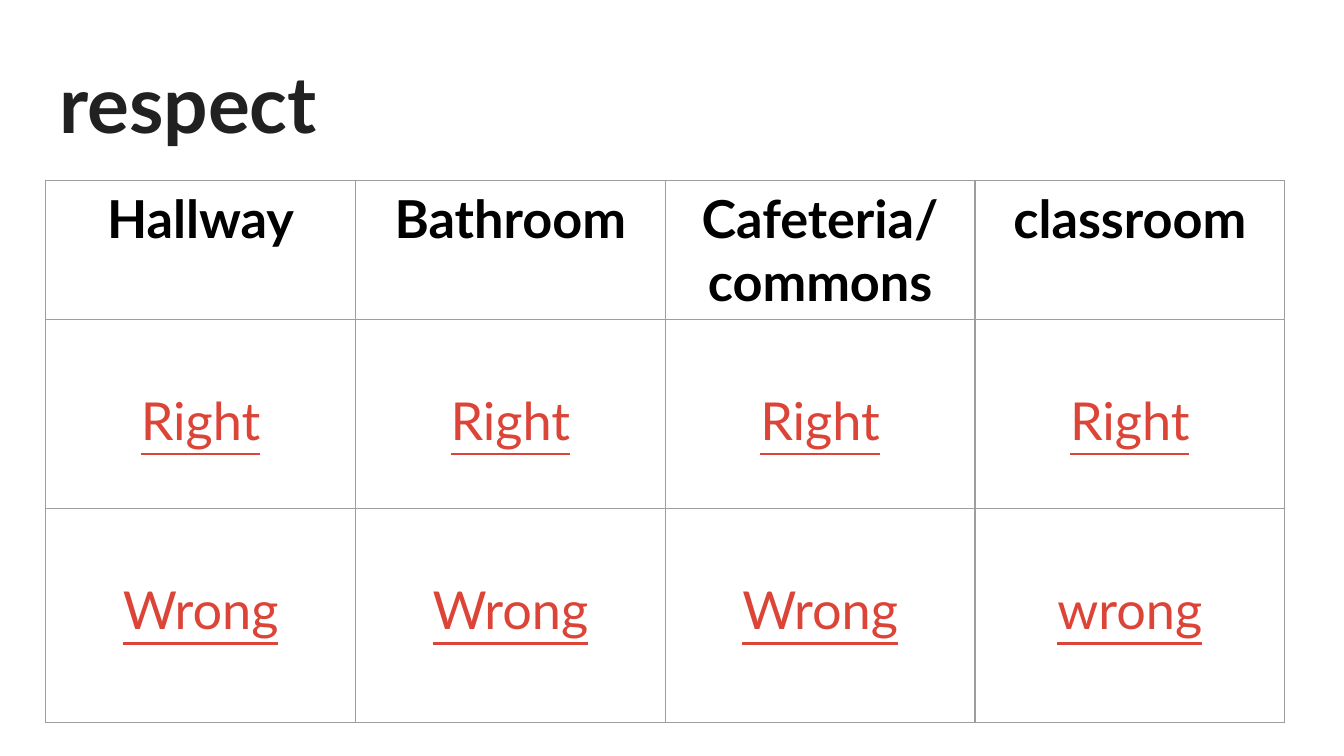
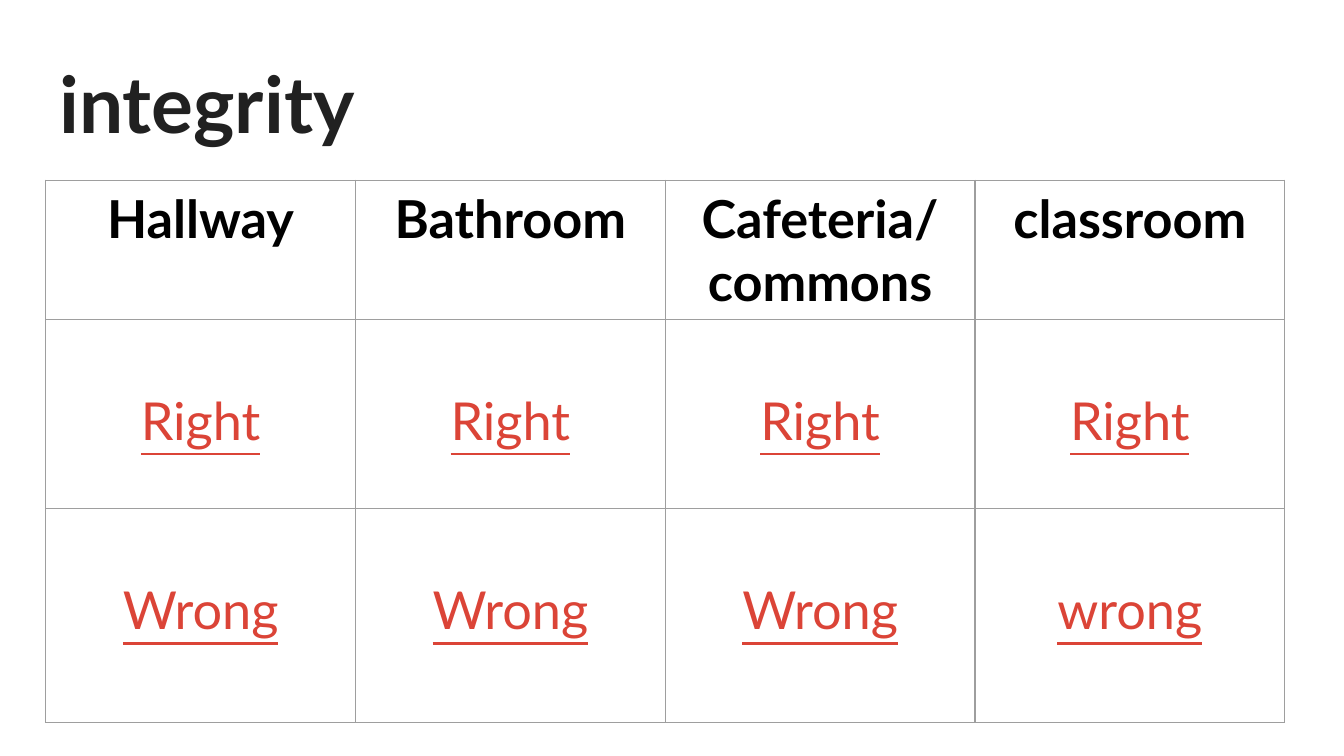
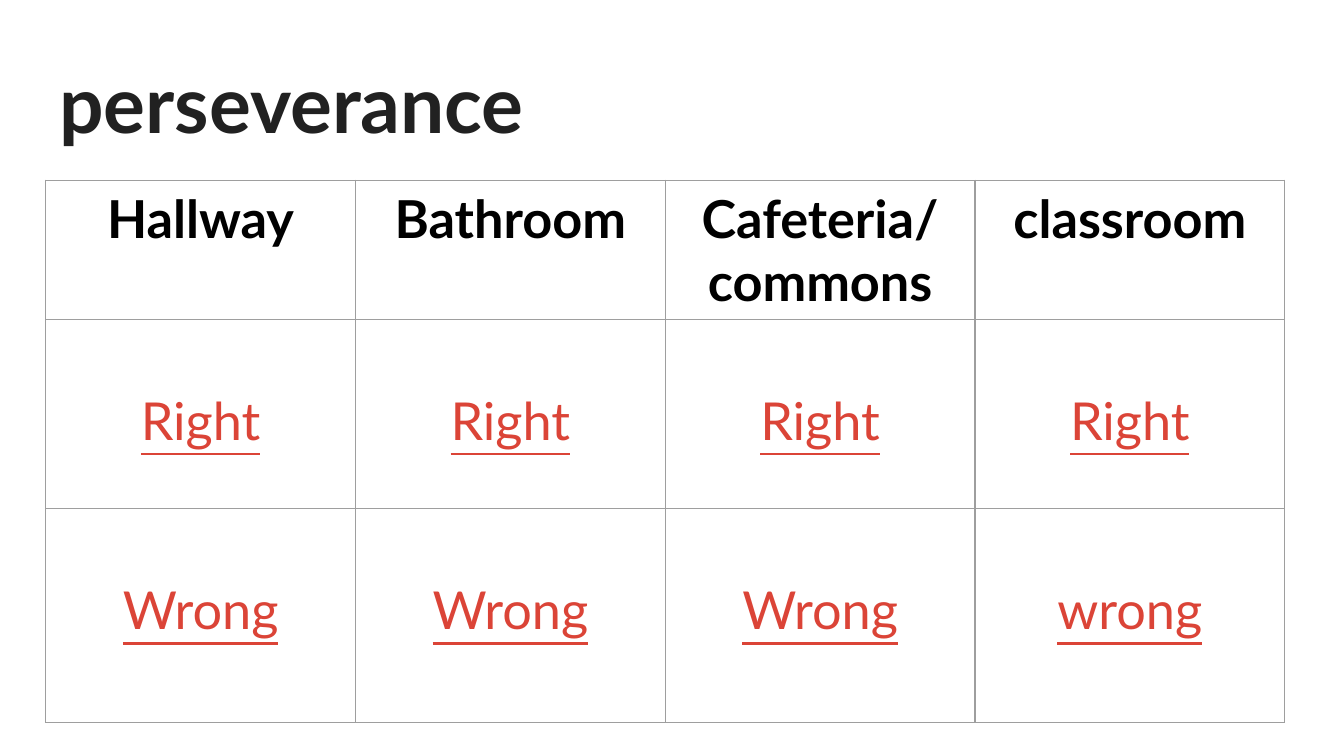
from pptx import Presentation
from pptx.dml.color import RGBColor
from pptx.enum.text import MSO_ANCHOR, MSO_AUTO_SIZE, PP_ALIGN
from pptx.oxml.ns import qn
from pptx.util import Inches, Pt
from lxml.etree import SubElement

FONT = "Lato"
TITLE_COLOR, HEADER_COLOR, ANSWER_COLOR = "212121", "000000", "DB4437"
BORDER_COLOR, BORDER_WIDTH = "9E9E9E", Pt(0.75)
TITLE_BOX = (0.34, 0.32, 9.32, 0.88)
TABLE_BOX = (0.34, 1.34, 9.22, 4.03)
ROW_HEIGHTS = (1.03, 1.41, 1.59)
ANSWER_TOP = 0.52
VALUES = ("respect", "integrity", "perseverance")
ROWS = (
    ("Hallway", "Bathroom", "Cafeteria/\ncommons", "classroom"),
    ("Right", "Right", "Right", "Right"),
    ("Wrong", "Wrong", "Wrong", "wrong"),
)


def style_text(text_frame, size, color, bold=False, underline=False, align=None):
    for para in text_frame.paragraphs:
        para.alignment = align
        for span in para.runs:
            font = span.font
            font.name, font.size = FONT, Pt(size)
            font.bold, font.underline = bold, underline
            font.color.rgb = RGBColor.from_string(color)


def add_borders(cell):
    properties = cell._tc.get_or_add_tcPr()
    for side in ("a:lnL", "a:lnR", "a:lnT", "a:lnB"):
        line = SubElement(properties, qn(side), w=str(BORDER_WIDTH))
        fill = SubElement(line, qn("a:solidFill"))
        SubElement(fill, qn("a:srgbClr"), val=BORDER_COLOR)


def add_title(page, box, text):
    title = page.shapes.title
    title.left, title.top, title.width, title.height = map(Inches, box)
    frame = title.text_frame
    frame.text = text
    frame.word_wrap = True
    frame.auto_size = MSO_AUTO_SIZE.NONE
    frame.vertical_anchor = MSO_ANCHOR.MIDDLE
    frame.margin_left = frame.margin_right = Inches(0.1)
    frame.margin_top = frame.margin_bottom = Inches(0.1)
    style_text(frame, 42, TITLE_COLOR, bold=True, align=PP_ALIGN.LEFT)


def fill_cell(cell, text, is_header):
    cell.text_frame.text = text
    cell.margin_left = cell.margin_right = Inches(0.1)
    cell.margin_top = Inches(0.05 if is_header else ANSWER_TOP)
    cell.margin_bottom = Inches(0.05)
    cell.vertical_anchor = MSO_ANCHOR.TOP
    style_text(cell.text_frame, 28, HEADER_COLOR if is_header else ANSWER_COLOR,
               bold=is_header, underline=not is_header, align=PP_ALIGN.CENTER)
    add_borders(cell)
    cell.fill.background()


def add_behavior_table(page, box):
    left, top, width, height = map(Inches, box)
    table = page.shapes.add_table(len(ROWS), len(ROWS[0]), left, top, width, height).table
    table.horz_banding = False
    for row, row_height in zip(table.rows, ROW_HEIGHTS):
        row.height = Inches(row_height)
    for row_index, texts in enumerate(ROWS):
        for column_index, text in enumerate(texts):
            fill_cell(table.cell(row_index, column_index), text, row_index == 0)


def add_value_page(deck, value):
    page = deck.slides.add_slide(deck.slide_layouts[5])
    add_title(page, TITLE_BOX, value)
    add_behavior_table(page, TABLE_BOX)


def main():
    deck = Presentation()
    deck.slide_width = Inches(10)
    deck.slide_height = deck.slide_width * 9 // 16
    for value in VALUES:
        add_value_page(deck, value)
    deck.save("out.pptx")


if __name__ == "__main__":
    main()
